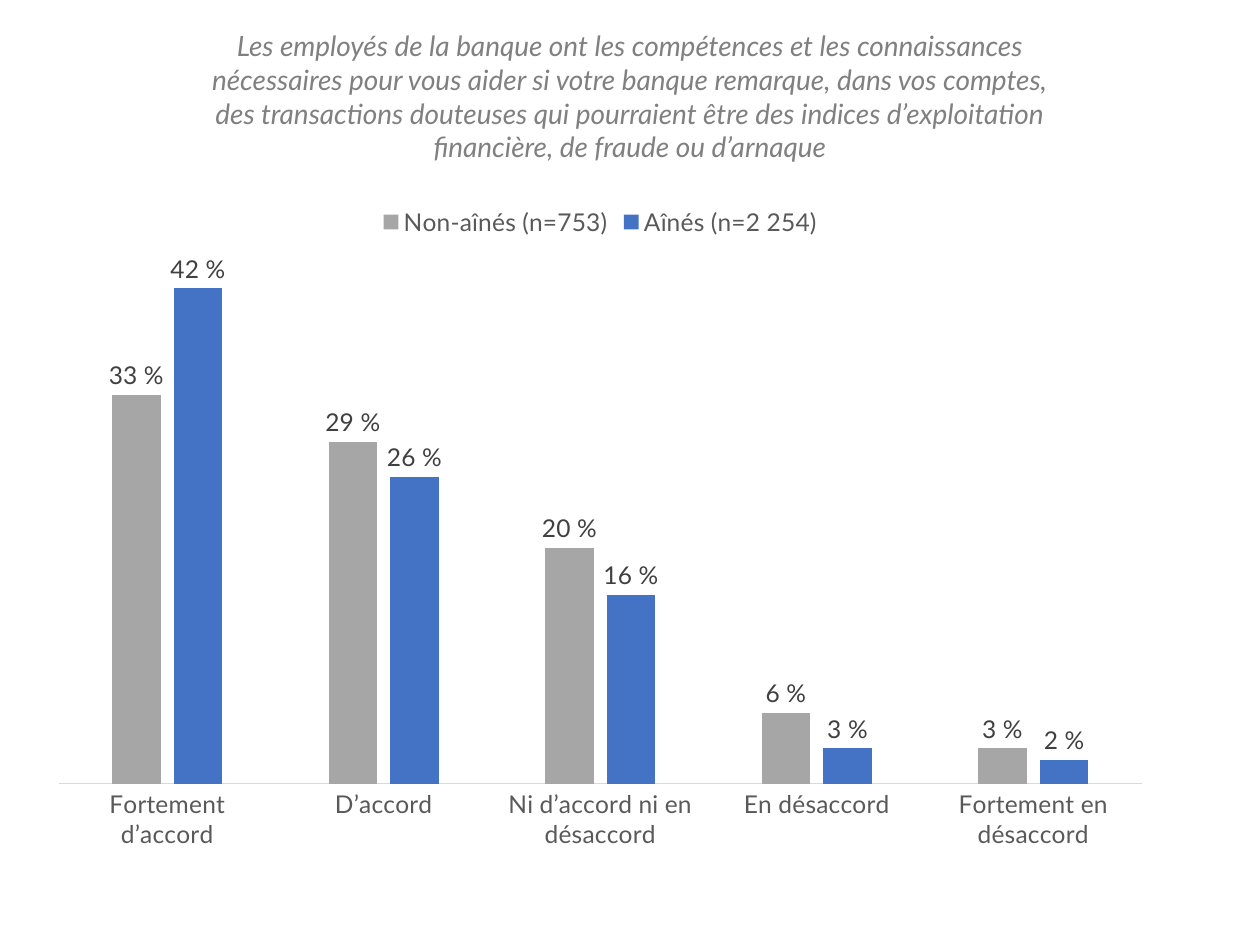
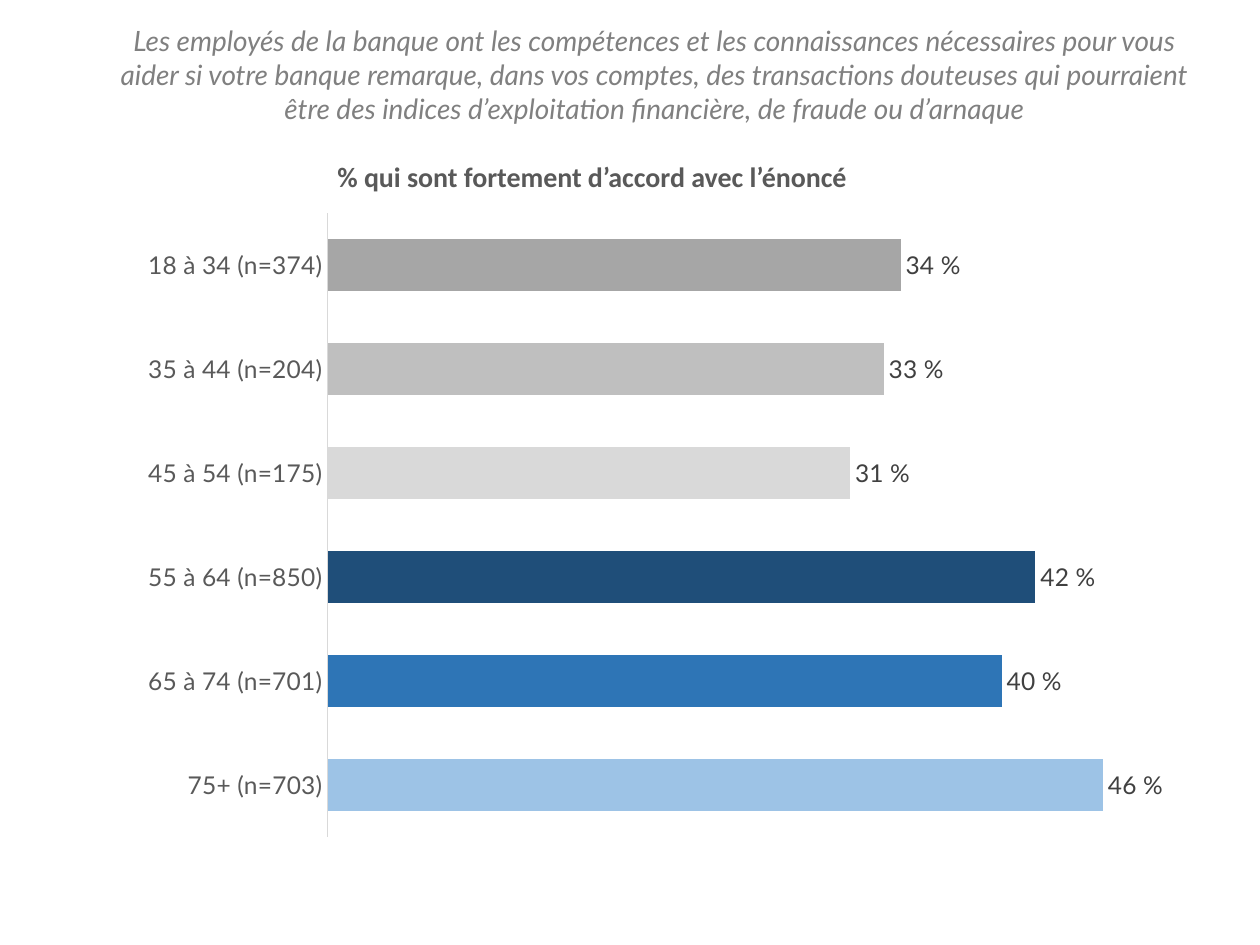
from dataclasses import dataclass

from lxml import etree
from pptx import Presentation
from pptx.chart.data import CategoryChartData
from pptx.dml.color import RGBColor
from pptx.enum.chart import XL_CHART_TYPE, XL_LABEL_POSITION, XL_LEGEND_POSITION, XL_TICK_MARK
from pptx.enum.text import MSO_ANCHOR, MSO_AUTO_SIZE, PP_ALIGN
from pptx.oxml.ns import qn
from pptx.util import Inches, Pt


@dataclass(frozen=True)
class Theme:
    question: str = "808080"
    text: str = "595959"
    value: str = "404040"
    axis: str = "D9D9D9"
    grey: str = "A6A6A6"
    mid_grey: str = "BFBFBF"
    pale_grey: str = "D9D9D9"
    blue: str = "4472C4"
    dark_blue: str = "1F4E79"
    strong_blue: str = "2E75B6"
    pale_blue: str = "9DC3E6"
    base: str = "000000"
    font: str = "Lato"
    heading_font: str = "Calibri"
    heading_size: int = 16
    label_size: int = 14
    base_size: int = 10


THEME = Theme()
QUESTION = (
    "Les employés de la banque ont les compétences et les connaissances nécessaires "
    "pour vous aider si votre banque remarque, dans vos comptes, des transactions "
    "douteuses qui pourraient être des indices d’exploitation financière, de fraude "
    "ou d’arnaque"
)
AGREEMENT = [
    "Fortement d’accord",
    "D’accord",
    "Ni d’accord ni en désaccord",
    "En désaccord",
    "Fortement en désaccord",
]
AGREEMENT_BY_GROUP = [
    ("Non-aînés (n=753)", [0.33, 0.29, 0.20, 0.06, 0.03], THEME.grey),
    ("Aînés (n=2 254)", [0.42, 0.26, 0.16, 0.03, 0.02], THEME.blue),
]
STRONG_AGREEMENT_BY_AGE = [
    ("18 à 34 (n=374)", 0.34, THEME.grey),
    ("35 à 44 (n=204)", 0.33, THEME.mid_grey),
    ("45 à 54 (n=175)", 0.31, THEME.pale_grey),
    ("55 à 64 (n=850)", 0.42, THEME.dark_blue),
    ("65 à 74 (n=701)", 0.40, THEME.strong_blue),
    ("75+ (n=703)", 0.46, THEME.pale_blue),
]


def style_font(font, size, color, name=THEME.font, bold=False, italic=False):
    font.name = name
    font.size = Pt(size)
    font.bold = bold
    font.italic = italic
    font.color.rgb = RGBColor.from_string(color)


def write_text(frame, text, align=PP_ALIGN.LEFT, wrap=True, **font_format):
    frame.word_wrap = wrap
    frame.auto_size = MSO_AUTO_SIZE.SHAPE_TO_FIT_TEXT
    frame.vertical_anchor = MSO_ANCHOR.TOP
    para = frame.paragraphs[0]
    para.alignment = align
    para.line_spacing = 1.0
    span = para.add_run()
    span.text = text
    style_font(span.font, **font_format)


def fill_solid(fill, color):
    fill.solid()
    fill.fore_color.rgb = RGBColor.from_string(color)


def place_plot(chart, x, y, w, h):
    plot_area = chart.plots[0]._element.getparent()
    for old_layout in plot_area.findall(qn("c:layout")):
        plot_area.remove(old_layout)
    layout = etree.Element(qn("c:layout"))
    plot_area.insert(0, layout)
    manual = etree.SubElement(layout, qn("c:manualLayout"))
    settings = {"layoutTarget": "inner", "xMode": "edge", "yMode": "edge",
                "x": x, "y": y, "w": w, "h": h}
    for name, value in settings.items():
        etree.SubElement(manual, qn(f"c:{name}")).set("val", str(value))


class SurveyDeck:
    def __init__(self, theme):
        self.theme = theme
        self.deck = Presentation()
        self.deck.slide_width = Inches(10)
        self.deck.slide_height = Inches(7.5)
        self.page = None

    def add_page(self, title, *bounds):
        self.page = self.deck.slides.add_slide(self.deck.slide_layouts[5])
        box = self.page.shapes.title
        box.left, box.top, box.width, box.height = map(Inches, bounds)
        write_text(box.text_frame, title, align=PP_ALIGN.CENTER, italic=True,
                   size=self.theme.heading_size, color=self.theme.question)

    def add_heading(self, text, *bounds):
        box = self.page.shapes.add_textbox(*map(Inches, bounds))
        write_text(box.text_frame, text, wrap=False, bold=True,
                   size=self.theme.heading_size, color=self.theme.text,
                   name=self.theme.heading_font)

    def add_chart(self, kind, categories, series, bounds, plot_bounds, gap, maximum, overlap=0):
        data = CategoryChartData(number_format="0%")
        data.categories = categories
        for name, values, _ in series:
            data.add_series(name, values)
        chart = self.page.shapes.add_chart(kind, *map(Inches, bounds), data).chart
        style_font(chart.font, self.theme.base_size, self.theme.base, self.theme.heading_font)
        chart.has_title = False
        chart.has_legend = False
        plot = chart.plots[0]
        plot.gap_width = gap
        plot.overlap = overlap
        plot.vary_by_categories = False
        for bars, (_, _, color) in zip(plot.series, series):
            fill_solid(bars.format.fill, color)
            bars.invert_if_negative = False
            self.add_value_labels(bars)
        self.style_axes(chart, maximum)
        place_plot(chart, *plot_bounds)
        return chart

    def add_value_labels(self, bars):
        labels = bars.data_labels
        labels.show_value = True
        labels.number_format = r"0\ %"
        labels.number_format_is_linked = False
        labels.position = XL_LABEL_POSITION.OUTSIDE_END
        style_font(labels.font, self.theme.label_size, self.theme.value)

    def style_axes(self, chart, maximum):
        values = chart.value_axis
        values.visible = False
        values.has_major_gridlines = False
        values.minimum_scale = 0
        values.maximum_scale = maximum
        categories = chart.category_axis
        categories.major_tick_mark = XL_TICK_MARK.NONE
        categories.minor_tick_mark = XL_TICK_MARK.NONE
        style_font(categories.tick_labels.font, self.theme.label_size, self.theme.text)
        categories.format.line.width = Pt(0.75)
        categories.format.line.color.rgb = RGBColor.from_string(self.theme.axis)

    def add_legend(self, chart):
        chart.has_legend = True
        chart.legend.position = XL_LEGEND_POSITION.TOP
        chart.legend.include_in_layout = False
        style_font(chart.legend.font, self.theme.label_size, self.theme.text)


def add_agreement_page(survey):
    survey.add_page(QUESTION, 1.51, 0.18, 6.98, 1.18)
    chart = survey.add_chart(
        XL_CHART_TYPE.COLUMN_CLUSTERED, AGREEMENT, AGREEMENT_BY_GROUP,
        bounds=(0.29, 1.53, 8.95, 5.33), plot_bounds=(0.02, 0.09, 0.96, 0.79),
        gap=219, overlap=-27, maximum=0.45)
    survey.add_legend(chart)


def add_age_page(survey):
    survey.add_page(QUESTION, 0.85, 0.14, 8.69, 0.91)
    ages, shares, colors = zip(*STRONG_AGREEMENT_BY_AGE)
    chart = survey.add_chart(
        XL_CHART_TYPE.BAR_CLUSTERED, ages, [("Fortement d’accord", shares, THEME.grey)],
        bounds=(0.43, 1.53, 9.04, 5.27), plot_bounds=(0.24, 0.03, 0.74, 0.94),
        gap=100, maximum=0.5)
    chart.category_axis.reverse_order = True
    bars = chart.plots[0].series[0]
    for index, color in enumerate(colors):
        fill_solid(bars.points[index].format.fill, color)
    survey.add_heading("% qui sont fortement d’accord avec l’énoncé", 2.58, 1.22, 4.56, 0.31)


def main():
    survey = SurveyDeck(THEME)
    add_agreement_page(survey)
    add_age_page(survey)
    survey.deck.save("out.pptx")


if __name__ == "__main__":
    main()
